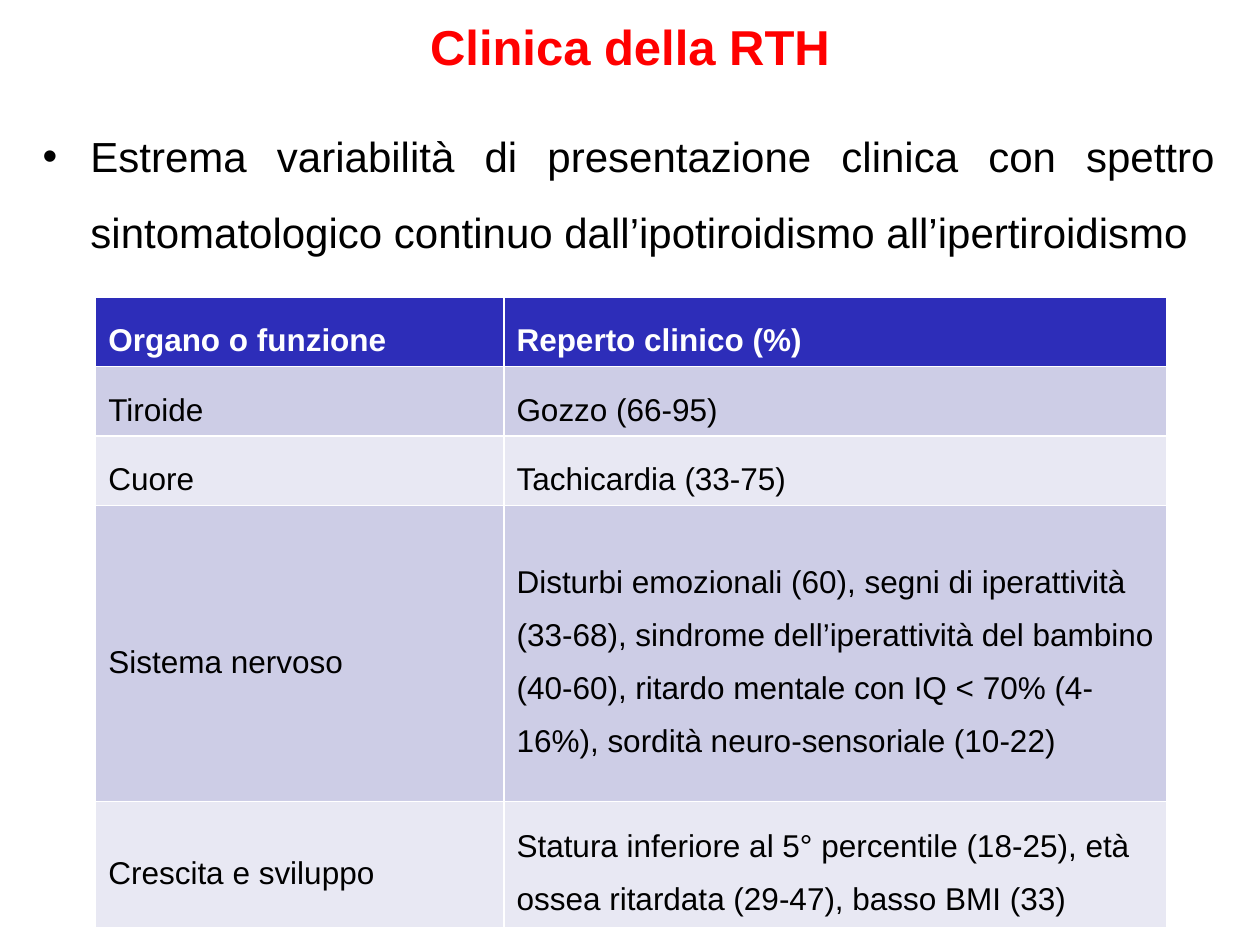
from dataclasses import dataclass
from typing import NamedTuple

from lxml.etree import SubElement
from pptx import Presentation
from pptx.dml.color import RGBColor as Rgb
from pptx.enum.text import MSO_ANCHOR as Anchor
from pptx.enum.text import MSO_AUTO_SIZE as Fit
from pptx.enum.text import PP_ALIGN as Align
from pptx.oxml.ns import qn
from pptx.util import Inches, Pt


@dataclass(frozen=True)
class Theme:
    font: str = "Arial"
    red: str = "FF0000"
    ink: str = "000000"
    pale: str = "FFFFFF"
    head: str = "2D2DB9"
    bands: tuple = ("E8E8F3", "CDCDE6")
    title: int = 28
    body: int = 24
    cell: int = 18


class Box(NamedTuple):
    left: float
    top: float
    wide: float
    high: float


class Row(NamedTuple):
    organ: str
    signs: str
    high: float


LOOK = Theme()
WIDE, HIGH = Inches(10), Inches(7.5)
TITLE = Box(7.5, 1.07, 85, 13.6)
BODY = Box(2.4, 10.53, 95, 66)
GRID = Box(7.6, 31.47, 85, 66.67)
COLS = (32.4, 52.6)
ROWS = (
    Row("Organo o funzione", "Reperto clinico (%)", 7.33),
    Row("Tiroide", "Gozzo (66-95)", 7.33),
    Row("Cuore", "Tachicardia (33-75)", 7.33),
    Row(
        "Sistema nervoso",
        "Disturbi emozionali (60), segni di iperattività (33-68), "
        "sindrome dell’iperattività del bambino (40-60), ritardo mentale "
        "con IQ < 70% (4-16%), sordità neuro-sensoriale (10-22)",
        31.33,
    ),
    Row(
        "Crescita e sviluppo",
        "Statura inferiore al 5° percentile (18-25), età ossea ritardata "
        "(29-47), basso BMI (33)",
        13.33,
    ),
)


def across(share: float) -> int:
    return round(WIDE * share / 100)


def down(share: float) -> int:
    return round(HIGH * share / 100)


def place(box: Box) -> tuple:
    return across(box.left), down(box.top), across(box.wide), down(box.high)


def write(frame, text: str, *, size: int, color: str, bold: bool = False,
          align=Align.LEFT, lead: float = 1.0, gap: float = 0):
    frame.word_wrap = True
    para = frame.paragraphs[0]
    para.alignment = align
    para.line_spacing = lead
    para.space_before = Pt(gap)
    run = para.add_run()
    run.text = text
    font = run.font
    font.name, font.size, font.bold = LOOK.font, Pt(size), bold
    font.color.rgb = Rgb.from_string(color)
    return para


def bullet(para, indent: float) -> None:
    props = para._p.get_or_add_pPr()
    props.set("marL", str(Inches(indent)))
    props.set("indent", str(-Inches(indent)))
    SubElement(props, qn("a:buFont")).set("typeface", LOOK.font)
    SubElement(props, qn("a:buChar")).set("char", "•")


def add_title(slide) -> None:
    title = slide.shapes.title
    title.left, title.top, title.width, title.height = place(TITLE)
    frame = title.text_frame
    frame.auto_size = Fit.NONE
    frame.vertical_anchor = Anchor.TOP
    write(frame, "Clinica della RTH", size=LOOK.title, color=LOOK.red,
          bold=True, align=Align.CENTER)


def add_body(slide) -> None:
    frame = slide.shapes.add_textbox(*place(BODY)).text_frame
    para = write(
        frame,
        "Estrema variabilità di presentazione clinica con spettro "
        "sintomatologico continuo dall’ipotiroidismo all’ipertiroidismo",
        size=LOOK.body, color=LOOK.ink, align=Align.JUSTIFY,
        lead=1.5, gap=LOOK.body * 0.2,
    )
    bullet(para, 0.38)


def add_grid(slide) -> None:
    shape = slide.shapes.add_table(len(ROWS), len(COLS), *place(GRID))
    table = shape.table
    for col, share in zip(table.columns, COLS):
        col.width = across(share)
    for i, row in enumerate(ROWS):
        table.rows[i].height = down(row.high)
        top = i == 0
        fill = LOOK.head if top else LOOK.bands[i % 2]
        for j, text in enumerate((row.organ, row.signs)):
            cell = table.cell(i, j)
            cell.vertical_anchor = Anchor.MIDDLE
            cell.fill.solid()
            cell.fill.fore_color.rgb = Rgb.from_string(fill)
            write(cell.text_frame, text, size=LOOK.cell, bold=top,
                  color=LOOK.pale if top else LOOK.ink, lead=1.5)


def main() -> None:
    deck = Presentation()
    deck.slide_width, deck.slide_height = WIDE, HIGH
    slide = deck.slides.add_slide(deck.slide_layouts.get_by_name("Title Only"))
    add_title(slide)
    add_body(slide)
    add_grid(slide)
    deck.save("out.pptx")


if __name__ == "__main__":
    main()
